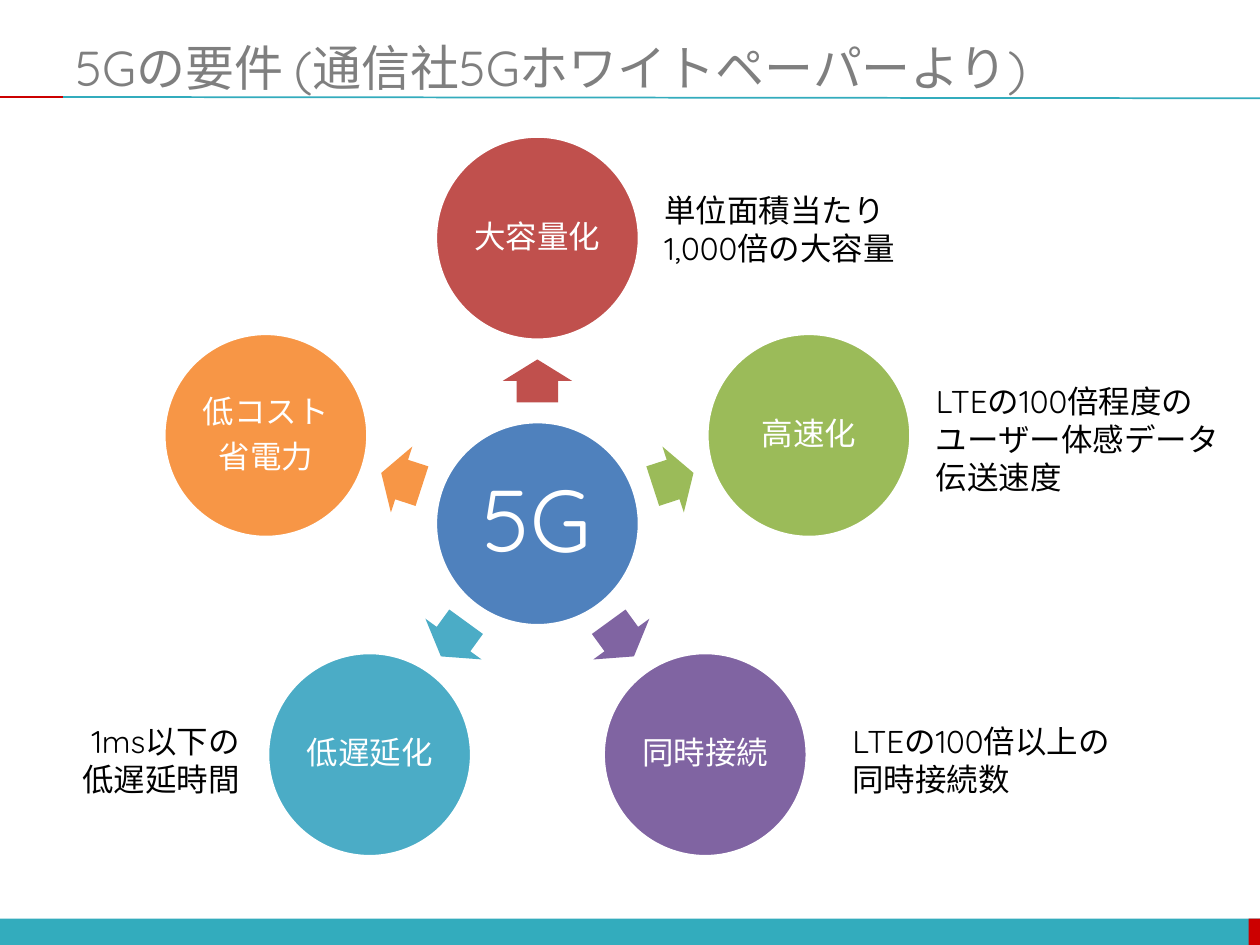
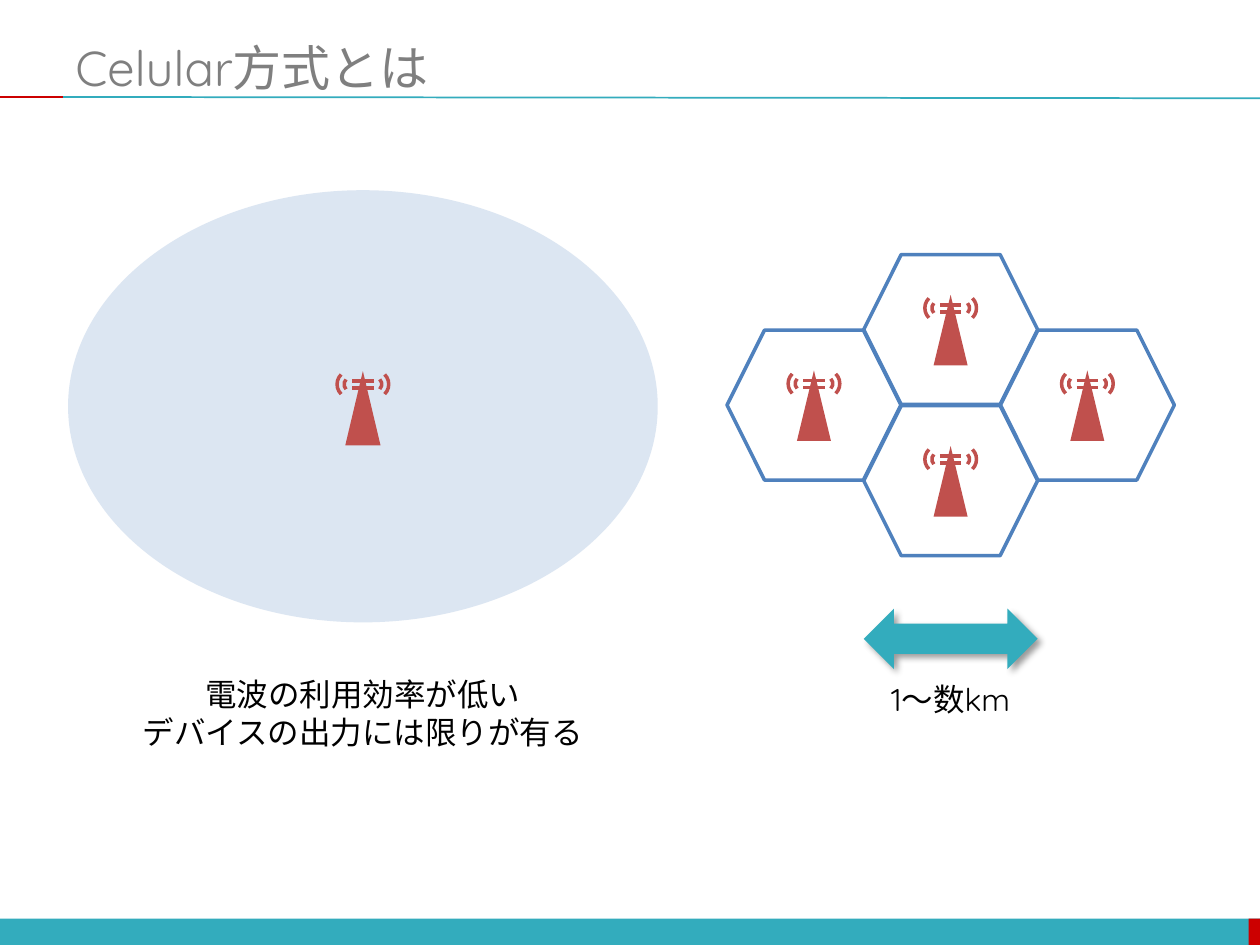
from math import cos, radians, sin

from lxml.etree import SubElement
from pptx import Presentation
from pptx.dml.color import RGBColor
from pptx.enum.shapes import MSO_CONNECTOR, MSO_SHAPE
from pptx.enum.text import MSO_ANCHOR, PP_ALIGN
from pptx.oxml.ns import qn
from pptx.util import Inches, Pt

# Grid of the slide: 100 columns by 75 rows of square cells
COLS, ROWS = 100, 75
CELL = Inches(0.1)

FONT = "Quicksand"
TEAL = RGBColor(0x33, 0xAC, 0xBD)
CRIMSON = RGBColor(0xCC, 0x00, 0x00)
GRAY = RGBColor(0x7F, 0x7F, 0x7F)
BLACK = RGBColor(0x00, 0x00, 0x00)
WHITE = RGBColor(0xFF, 0xFF, 0xFF)
BLUE = RGBColor(0x4F, 0x81, 0xBD)
PALE_BLUE = RGBColor(0xDC, 0xE6, 0xF2)
RED = RGBColor(0xC0, 0x50, 0x4D)
GREEN = RGBColor(0x9B, 0xBB, 0x59)
PURPLE = RGBColor(0x80, 0x64, 0xA2)
AQUA = RGBColor(0x4B, 0xAC, 0xC6)
ORANGE = RGBColor(0xF7, 0x96, 0x46)

# Label, colour, caption, caption box from the circle's centre, alignment
REQUIREMENTS = [
    (["大容量化"], RED, "単位面積当たり1,000倍の大容量",
     (9.1, -4.2, 24.5, 7.1), PP_ALIGN.LEFT),
    (["高速化"], GREEN, "LTEの100倍程度のユーザー体感データ伝送速度",
     (9.1, -4.7, 24.5, 10.1), PP_ALIGN.LEFT),
    (["同時接続"], PURPLE, "LTEの100倍以上の同時接続数",
     (10.7, -3.1, 24.5, 7.1), PP_ALIGN.LEFT),
    (["低遅延化"], AQUA, "1ms以下の低遅延時間",
     (-25.3, -3.1, 16, 7.1), PP_ALIGN.RIGHT),
    (["低コスト", "省電力"], ORANGE, None, None, None),
]


def grid(*cells):
    return [round(n * CELL) for n in cells]


def centred(cx, cy, w, h):
    return cx - w / 2, cy - h / 2, w, h


def add_part(s, kind, box, fill=None, line=None, rotation=0):
    sp = s.shapes.add_shape(kind, *grid(*box))
    sp.shadow.inherit = False
    sp.rotation = rotation
    if fill is None:
        sp.fill.background()
    else:
        sp.fill.solid()
        sp.fill.fore_color.rgb = fill
    if line is None:
        sp.line.fill.background()
    else:
        sp.line.color.rgb = line
        sp.line.width = Pt(2)
    return sp


def add_line(s, x1, y1, x2, y2, color, width):
    line = s.shapes.add_connector(MSO_CONNECTOR.STRAIGHT, *grid(x1, y1, x2, y2))
    line.line.color.rgb = color
    line.line.width = Pt(width)
    SubElement(line._element.spPr, qn("a:effectLst"))


def write(sp, lines, size, color, align, anchor=MSO_ANCHOR.TOP):
    tf = sp.text_frame
    tf.word_wrap = True
    tf.vertical_anchor = anchor
    for i, text in enumerate(lines):
        p = tf.paragraphs[0] if i == 0 else tf.add_paragraph()
        p.text = text
        p.alignment = align
        p.font.name, p.font.size, p.font.color.rgb = FONT, Pt(size), color
    return tf


def add_text(s, box, lines, size=18, color=BLACK, align=PP_ALIGN.LEFT,
             anchor=MSO_ANCHOR.TOP):
    write(s.shapes.add_textbox(*grid(*box)), lines, size, color, align, anchor)


def add_base(prs, title):
    s = prs.slides.add_slide(prs.slide_layouts[6])
    # Footer band
    add_part(s, MSO_SHAPE.RECTANGLE, (0, 72.9, COLS, 2.15), TEAL)
    add_part(s, MSO_SHAPE.RECTANGLE, (99.1, 72.9, 0.9, 2.15), CRIMSON)
    # Rule under the title
    add_line(s, 5, 7.7, COLS, 7.8, TEAL, 1)
    add_line(s, 0, 7.7, 5, 7.7, CRIMSON, 1)
    add_text(s, (5, 3, 95, 4.6), [title], 28, GRAY, anchor=MSO_ANCHOR.MIDDLE)
    return s


def add_circle(s, cx, cy, diameter, fill, lines, size, inset):
    sp = add_part(s, MSO_SHAPE.OVAL, centred(cx, cy, diameter, diameter), fill, WHITE)
    tf = write(sp, lines, size, WHITE, PP_ALIGN.CENTER, MSO_ANCHOR.MIDDLE)
    tf.margin_left = tf.margin_right = tf.margin_top = tf.margin_bottom = inset
    for p in tf.paragraphs:
        p.line_spacing = 0.9
        p.space_after = Pt(size * 0.35)


def add_radial(s, box, diameter=16.2):
    x, y, w, _ = box
    step = 360 / len(REQUIREMENTS)
    radius = (w - diameter) / 2 / sin(radians(step))
    hub_x, hub_y = x + w / 2, y + diameter / 2 + radius
    add_circle(s, hub_x, hub_y, diameter, BLUE, ["5G"], 50, Inches(0.07))
    for i, (label, color, caption, caption_box, align) in enumerate(REQUIREMENTS):
        angle = i * step - 90
        dx, dy = cos(radians(angle)), sin(radians(angle))
        # Arrow halfway to the outer circle
        arrow = add_part(
            s, MSO_SHAPE.RIGHT_ARROW,
            centred(hub_x + dx * radius / 2, hub_y + dy * radius / 2, 3.4, 5.5),
            color, rotation=angle % 360)
        arrow.adjustments[0] = 0.6
        cx, cy = hub_x + dx * radius, hub_y + dy * radius
        add_circle(s, cx, cy, diameter, color, label, 18, Inches(0.03))
        if caption:
            left, top, width, height = caption_box
            add_text(s, (cx + left, cy + top, width, height), [caption], align=align)


def add_tower(s, cx, top, w, h):
    add_part(s, MSO_SHAPE.ISOSCELES_TRIANGLE, (cx - w / 2, top, w, h), RED)
    # Crossbars
    for drop in (0.8, 1.35):
        add_line(s, cx - 0.85, top + drop, cx + 0.85, top + drop, RED, 2)
    # Radio waves on both sides
    for side, rotation in ((1, 45), (-1, 225)):
        for diameter in (1.1, 2.2):
            add_part(s, MSO_SHAPE.ARC,
                     centred(cx + side * 0.95, top + 1.05, diameter, diameter),
                     line=RED, rotation=rotation)


def add_wide_area(s, box):
    x, y, w, h = box
    add_part(s, MSO_SHAPE.OVAL, box, PALE_BLUE)
    add_tower(s, x + w / 2, y + h / 2 - 2.8, 2.8, 5.9)
    add_text(s, (x, y + h + 3.7, w, 7.1),
             ["電波の利用効率が低い", "デバイスの出力には限りが有る"],
             align=PP_ALIGN.CENTER)


def add_cells(s, box):
    x, y, w, h = box
    cell_w, cell_h = 13.8, 11.9
    step_x, step_y = (w - cell_w) / 2, (h - cell_h) / 2
    for col, row in ((0, 1), (1, 0), (1, 2), (2, 1)):
        left, top = x + col * step_x, y + row * step_y
        add_part(s, MSO_SHAPE.HEXAGON, (left, top, cell_w, cell_h), WHITE, BLUE)
        add_tower(s, left + cell_w / 2, top + 3.2, 2.7, 5.6)
    # Cell width, under the middle column
    arrow = add_part(s, MSO_SHAPE.LEFT_RIGHT_ARROW,
                     (x + step_x, y + h + 4.2, cell_w, 4.8), TEAL)
    add_shadow(arrow)
    add_text(s, (x + w / 2 - 6.05, y + h + 9.4, 12.1, 4), ["1～数km"],
             align=PP_ALIGN.CENTER)


def add_shadow(sp):
    effects = sp._element.spPr.find(qn("a:effectLst"))
    shadow = SubElement(effects, qn("a:outerShdw"), blurRad=str(Pt(4)),
                        dist=str(Pt(3)), dir="2700000", algn="tl", rotWithShape="0")
    color = SubElement(shadow, qn("a:srgbClr"), val=str(BLACK))
    SubElement(color, qn("a:alpha"), val="40000")


def main():
    prs = Presentation()
    prs.slide_width, prs.slide_height = grid(COLS, ROWS)

    s = add_base(prs, "5Gの要件 (通信社5Gホワイトペーパーより)")
    add_radial(s, (13, 10.8, 59.3, 57.2))

    s = add_base(prs, "Celular方式とは")
    add_cells(s, (57.7, 20.2, 35.5, 23.9))
    add_wide_area(s, (5.4, 15.1, 46.8, 34.3))

    prs.save("out.pptx")


if __name__ == "__main__":
    main()
